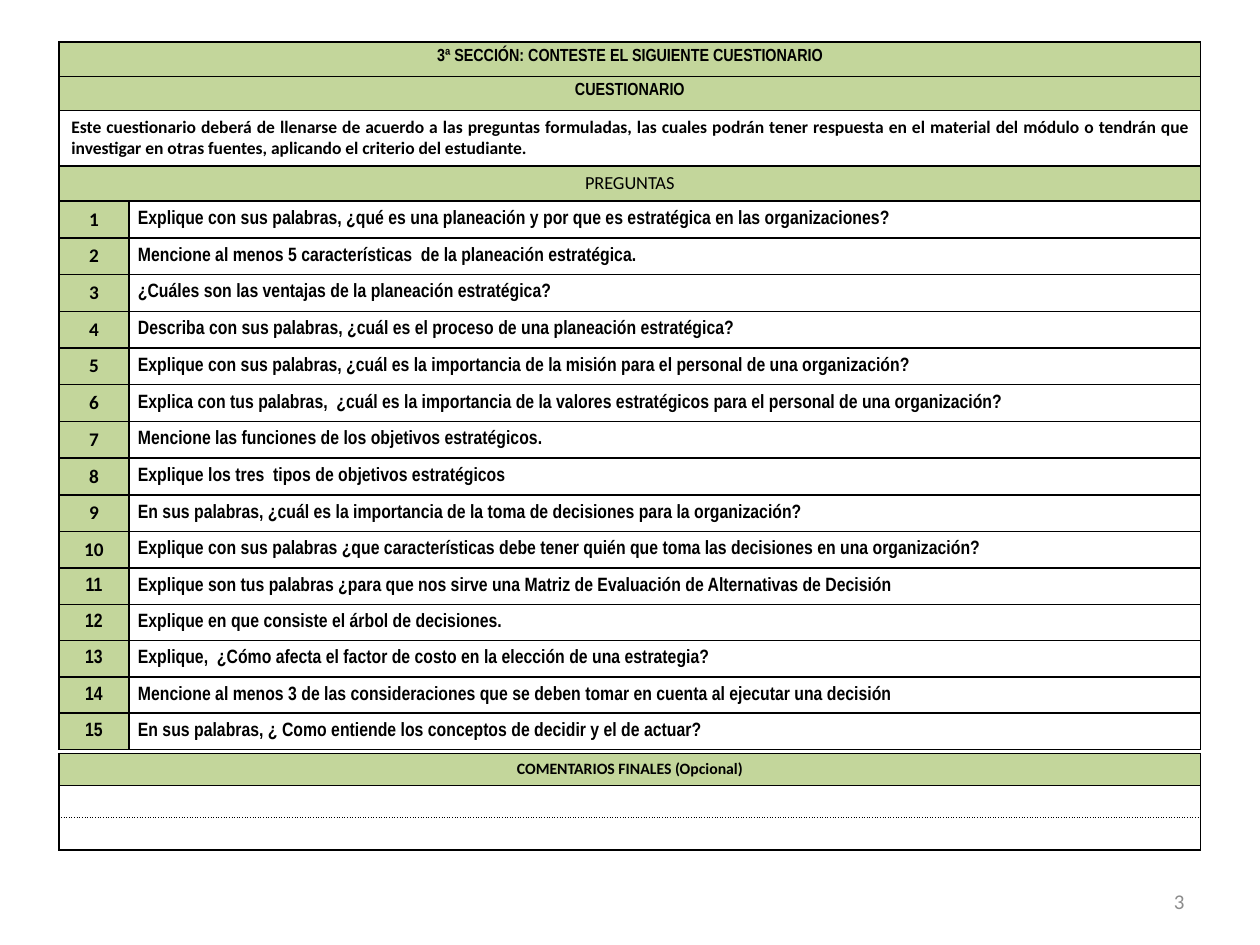
import pptx
import pptx.util
import pptx.dml.color
import pptx.enum.text
import pptx.oxml.ns
import lxml.etree

Cm, Pt = pptx.util.Cm, pptx.util.Pt
ALIGN = pptx.enum.text.PP_ALIGN
ANCHOR = pptx.enum.text.MSO_ANCHOR
qn = pptx.oxml.ns.qn

COLORS = {"green": "C3D69B", "white": "FFFFFF", "black": "000000", "gray": "8C8C8C"}
NARROW, CALIBRI = "Arial Narrow", "Calibri"

# Content: full-width rows as (text, fill, height in cm, format)
HEADINGS = [
    ("3ª SECCIÓN: CONTESTE EL SIGUIENTE CUESTIONARIO", "green", 0.69,
     dict(font=NARROW, anchor=ANCHOR.TOP)),
    ("CUESTIONARIO", "green", 0.69, dict(font=NARROW, anchor=ANCHOR.TOP)),
    ("Este cuestionario deberá de llenarse de acuerdo a las preguntas formuladas, "
     "las cuales podrán tener respuesta en el material del módulo o tendrán que "
     "investigar en otras fuentes, aplicando el criterio del estudiante.",
     "white", 1.11, dict(align=ALIGN.JUSTIFY)),
    ("PREGUNTAS", "green", 0.71, dict(size=10.5, bold=False)),
]
QUESTIONS = [
    "Explique con sus palabras, ¿qué es una planeación y por que es estratégica en las organizaciones?",
    "Mencione al menos 5 características  de la planeación estratégica.",
    "¿Cuáles son las ventajas de la planeación estratégica?",
    "Describa con sus palabras, ¿cuál es el proceso de una planeación estratégica?",
    "Explique con sus palabras, ¿cuál es la importancia de la misión para el personal de una organización?",
    "Explica con tus palabras,  ¿cuál es la importancia de la valores estratégicos para el personal de una organización?",
    "Mencione las funciones de los objetivos estratégicos.",
    "Explique los tres  tipos de objetivos estratégicos",
    "En sus palabras, ¿cuál es la importancia de la toma de decisiones para la organización?",
    "Explique con sus palabras ¿que características debe tener quién que toma las decisiones en una organización?",
    "Explique son tus palabras ¿para que nos sirve una Matriz de Evaluación de Alternativas de Decisión",
    "Explique en que consiste el árbol de decisiones.",
    "Explique,  ¿Cómo afecta el factor de costo en la elección de una estrategia?",
    "Mencione al menos 3 de las consideraciones que se deben tomar en cuenta al ejecutar una decisión",
    "En sus palabras, ¿ Como entiende los conceptos de decidir y el de actuar?",
]
COMMENTS = ["COMENTARIOS FINALES (Opcional)", "", ""]
PAGE = "3"

# Layout in cm
LEFT, WIDTH, NUMBER_W = 1.19, 23.01, 1.41
QUESTIONS_TOP, COMMENTS_TOP = 0.85, 15.19
QUESTION_H, COMMENT_H = 0.73, 0.63
FIRST_NARROW_NUMBER = 11


def rgb(name):
    return pptx.dml.color.RGBColor.from_string(COLORS[name])


def style(p, font, size, bold, align, color="black"):
    p.alignment = align
    p.font.name, p.font.size, p.font.bold = font, Pt(size), bold
    p.font.color.rgb = rgb(color)


def set_borders(cell, dotted=()):
    tcPr = cell._tc.get_or_add_tcPr()
    for i, side in enumerate(("lnL", "lnR", "lnT", "lnB")):
        ln = lxml.etree.Element(qn("a:" + side), w=str(Pt(1)))
        fill = lxml.etree.SubElement(ln, qn("a:solidFill"))
        lxml.etree.SubElement(fill, qn("a:srgbClr"), val=COLORS["black"])
        dash = "sysDot" if side in dotted else "solid"
        lxml.etree.SubElement(ln, qn("a:prstDash"), val=dash)
        tcPr.insert(i, ln)


def fill_cell(cell, text, fill, font=CALIBRI, size=10, bold=True,
              align=ALIGN.CENTER, anchor=ANCHOR.MIDDLE, margins=(0.25, 0.13),
              before=0, dotted=()):
    cell.fill.solid()
    cell.fill.fore_color.rgb = rgb(fill)
    cell.vertical_anchor = anchor
    cell.margin_left = cell.margin_right = Cm(margins[0])
    cell.margin_top = cell.margin_bottom = Cm(margins[1])
    p = cell.text_frame.paragraphs[0]
    style(p, font, size, bold, align)
    p.space_before = Pt(before)
    if text:
        p.add_run().text = text
    else:
        lxml.etree.SubElement(p._p, qn("a:endParaRPr"), sz=str(size * 100))
    set_borders(cell, dotted)


def add_table(s, top, widths, heights):
    table = s.shapes.add_table(len(heights), len(widths), Cm(LEFT), Cm(top),
                               Cm(WIDTH), Cm(sum(heights))).table
    table.first_row = table.horz_banding = False
    for column, width in zip(table.columns, widths):
        column.width = Cm(width)
    for row, height in zip(table.rows, heights):
        row.height = Cm(height)
    return table


prs = pptx.Presentation()
prs.slide_width, prs.slide_height = Cm(25.4), Cm(19.05)
s = prs.slides.add_slide(prs.slide_layouts[6])

# Questionnaire: merged headings, then numbered questions
heights = [h[2] for h in HEADINGS] + [QUESTION_H] * len(QUESTIONS)
table = add_table(s, QUESTIONS_TOP, [NUMBER_W, WIDTH - NUMBER_W], heights)
for i, (text, fill, _, options) in enumerate(HEADINGS):
    table.cell(i, 0).merge(table.cell(i, 1))
    fill_cell(table.cell(i, 0), text, fill, before=3, **options)
    set_borders(table.cell(i, 1))
for n, question in enumerate(QUESTIONS, 1):
    row = len(HEADINGS) + n - 1
    number_font = NARROW if n >= FIRST_NARROW_NUMBER else CALIBRI
    fill_cell(table.cell(row, 0), str(n), "green", font=number_font, size=11)
    fill_cell(table.cell(row, 1), question, "white", font=NARROW, size=11,
              align=ALIGN.JUSTIFY, margins=(0.18, 0.1), before=4)

# Final comments: heading and two lines split by a dotted rule
table = add_table(s, COMMENTS_TOP, [WIDTH], [COMMENT_H] * len(COMMENTS))
for i, (text, dotted) in enumerate(zip(COMMENTS, [(), ("lnB",), ("lnT",)])):
    fill_cell(table.cell(i, 0), text, "white" if i else "green", size=9, dotted=dotted)

# Page number
tf = s.shapes.add_textbox(Cm(18.2), Cm(17.66), Cm(5.93), Cm(1.01)).text_frame
tf.word_wrap = True
tf.vertical_anchor = ANCHOR.MIDDLE
p = tf.paragraphs[0]
p.text = PAGE
style(p, CALIBRI, 12, False, ALIGN.RIGHT, "gray")

prs.save("out.pptx")
